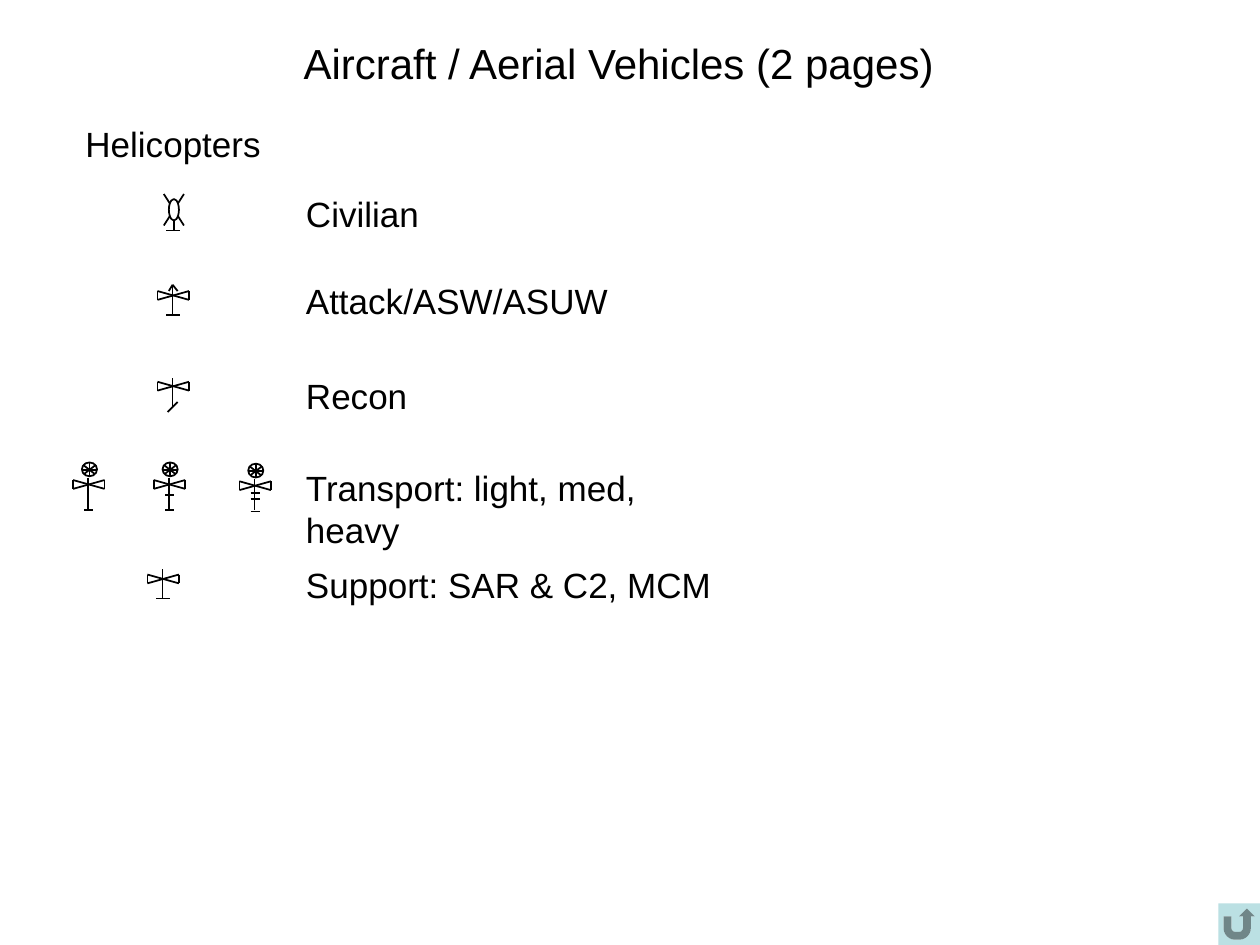
import pptx
import pptx.util
import pptx.dml.color
import pptx.enum.shapes
import pptx.enum.text
import pptx.oxml

PX = 9144  # 100 px to the inch
HEX = {"ink": "000000", "paper": "FFFFFF", "button": "BBE0E3"}
FONT = "Arial"
KIND = pptx.enum.shapes.MSO_SHAPE
TEXT = pptx.enum.text


def px(*nums):
    return [pptx.util.Emu(n * PX) for n in nums]


def tint(name):
    return pptx.dml.color.RGBColor.from_string(HEX[name])


class Sheet:
    """Holds the slide and the group that symbols are drawn into."""

    def __init__(self, deck):
        self.slide = deck.slides.add_slide(deck.slide_layouts[5])
        self.group = None

    def style(self, para, size):
        para.font.name = FONT
        para.font.size = pptx.util.Pt(size)
        para.font.color.rgb = tint("ink")

    def title(self, text, *box):
        head = self.slide.shapes.title
        head.left, head.top, head.width, head.height = px(*box)
        frame = head.text_frame
        frame.text = text
        frame.margin_left = frame.margin_right = 0
        frame.margin_top = frame.margin_bottom = 0
        frame.vertical_anchor = TEXT.MSO_ANCHOR.MIDDLE
        frame.auto_size = TEXT.MSO_AUTO_SIZE.NONE
        frame.word_wrap = False
        frame.paragraphs[0].alignment = TEXT.PP_ALIGN.CENTER
        self.style(frame.paragraphs[0], 24)

    def label(self, text, *box, wrap=False):
        frame = self.slide.shapes.add_textbox(*px(*box)).text_frame
        frame.text = text
        frame.word_wrap = wrap
        self.style(frame.paragraphs[0], 20)

    def start(self):
        self.group = self.slide.shapes.add_group_shape()

    def pen(self, shape):
        shape.line.color.rgb = tint("ink")
        shape.line.width = pptx.util.Pt(1)

    def line(self, *ends):
        kind = pptx.enum.shapes.MSO_CONNECTOR.STRAIGHT
        link = self.group.shapes.add_connector(kind, *px(*ends))
        self.pen(link)
        blank = pptx.oxml.parse_xml(
            '<a:effectLst xmlns:a="http://schemas.openxmlformats.org/drawingml/2006/main"/>')
        link._element.spPr.append(blank)

    def oval(self, *box, fill=None):
        oval = self.group.shapes.add_shape(KIND.OVAL, *px(*box))
        oval.shadow.inherit = False
        self.pen(oval)
        if fill:
            oval.fill.solid()
            oval.fill.fore_color.rgb = tint(fill)
        else:
            oval.fill.background()

    def button(self, *box):
        key = self.slide.shapes.add_shape(KIND.ACTION_BUTTON_RETURN, *px(*box))
        key.shadow.inherit = False
        key.fill.solid()
        key.fill.fore_color.rgb = tint("button")
        key.line.fill.background()

    def rotor(self, x, y, up, down):
        """Start a symbol: bow-tie blades at x, y and a mast past them."""
        self.start()
        self.line(x + 12, y - up, x + 12, y + down)
        self.line(x, y, x + 25, y + 7)
        self.line(x + 25, y, x, y + 7)
        for side in (x, x + 25):
            self.line(side, y, side, y + 7)

    def foot(self, x, y):
        self.line(x, y, x + 11, y)

    def civil(self, x, y):
        self.start()
        self.line(x + 8, y + 7, x + 8, y + 29)
        self.foot(x + 2, y + 29)
        self.line(x, y, x + 16, y + 25)
        self.line(x + 16, y, x, y + 25)
        self.oval(x + 4, y + 4, 8, 17, fill="paper")

    def attack(self, x, y):
        self.rotor(x, y, 4, 19)
        self.foot(x + 7, y + 19)
        for tip in (9, 16):
            self.line(x + 12, y - 5, x + tip, y)

    def recon(self, x, y):
        self.rotor(x, y, 3, 20)
        self.line(x + 8, y + 24, x + 16, y + 16)

    def cargo(self, x, y, bars):
        """Transport symbol with a wheel on top and size bars on the mast."""
        self.rotor(x, y, 2, 23)
        self.oval(x + 7, y - 14, 12, 11)
        self.line(x + 7, y - 8, x + 19, y - 8)
        self.line(x + 13, y - 3, x + 13, y - 14)
        self.line(x + 17, y - 5, x + 8, y - 12)
        self.line(x + 9, y - 5, x + 18, y - 12)
        for drop in (*bars, 24):
            self.line(x + 9, y + drop, x + 16, y + drop)

    def support(self, x, y):
        self.rotor(x, y, 4, 19)
        self.foot(x + 7, y + 19)


def main():
    deck = pptx.Presentation()
    deck.slide_width, deck.slide_height = px(1000, 750)
    sheet = Sheet(deck)
    sheet.title("Aircraft / Aerial Vehicles (2 pages)", 239, 30, 504, 40)
    sheet.label("Helicopters", 58, 92, 167, 43)
    for text, top, width in (
        ("Civilian", 148, 118),
        ("Attack/ASW/ASUW", 217, 267),
        ("Recon", 292, 108),
        ("Support: SAR & C2, MCM", 442, 349),
    ):
        sheet.label(text, 233, top, width, 43)
    sheet.label("Transport: light, med, heavy", 233, 365, 360, 43, wrap=True)

    sheet.civil(130, 154)
    sheet.attack(125, 231)
    sheet.recon(125, 303)
    for x, y, bars in ((58, 381, ()), (122, 381, (12,)), (190, 382, (9, 14))):
        sheet.cargo(x, y, bars)
    sheet.support(117, 456)
    sheet.button(967, 717, 33, 33)
    deck.save("out.pptx")


if __name__ == "__main__":
    main()
